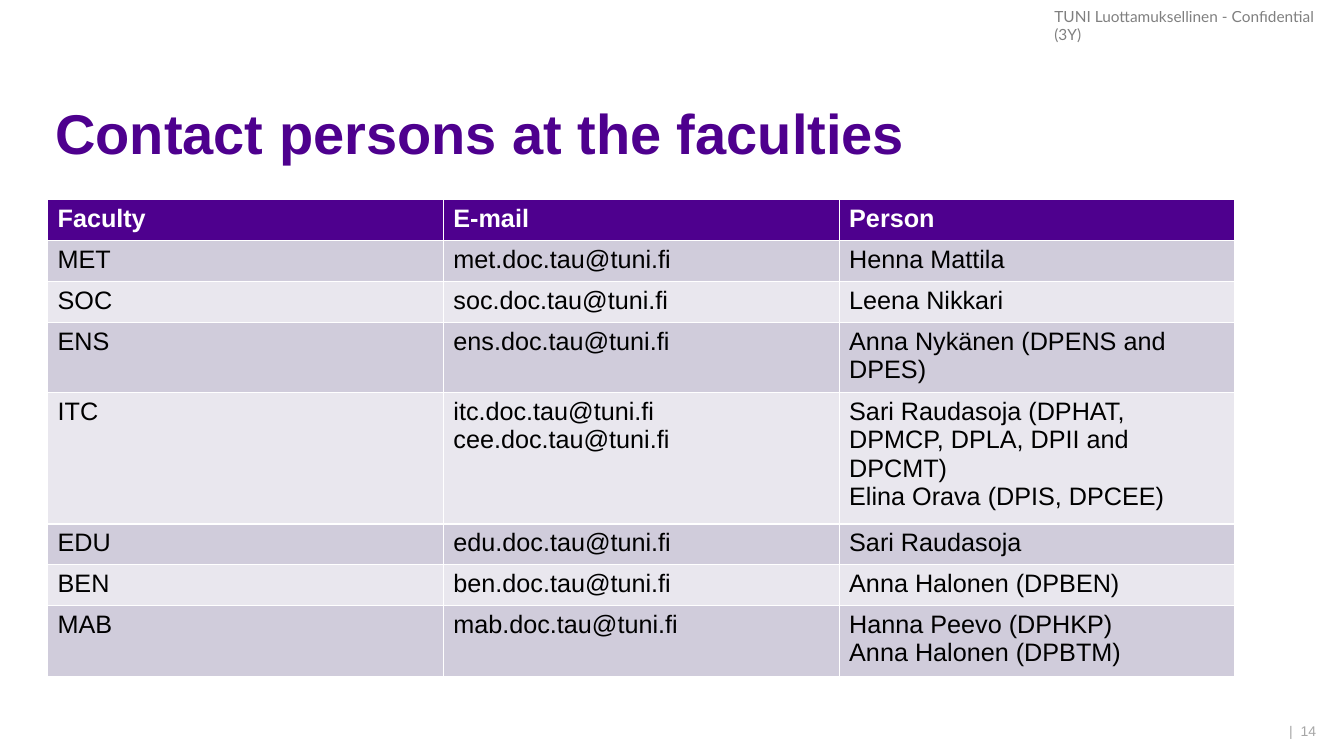
from lxml import etree
from pptx import Presentation
from pptx.dml.color import RGBColor
from pptx.enum import text
from pptx.oxml import ns
from pptx.util import Pt


def color(value):
    return RGBColor.from_string(value)


def add_label(slide, content, left, top, width, height, size, font, fill):
    shape = slide.shapes.add_textbox(Pt(left), Pt(top), Pt(width), Pt(height))
    frame = shape.text_frame
    frame.word_wrap = True
    frame.margin_left = 0
    paragraph = frame.paragraphs[0]
    paragraph.text = content
    paragraph.font.size = Pt(size)
    paragraph.font.name = font
    paragraph.font.color.rgb = color(fill)
    return frame


presentation = Presentation()
presentation.slide_width = Pt(960)
presentation.slide_height = Pt(540)
slide = presentation.slides.add_slide(presentation.slide_layouts[5])

notice = add_label(slide, "TUNI Luottamuksellinen - Confidential (3Y)",
                   753.1, 5, 204.5, 13, 11, "Lato", "000000")
notice.margin_top = notice.margin_right = notice.margin_bottom = 0
notice_color = next(notice.paragraphs[0]._p.iter(ns.qn("a:srgbClr")))
etree.SubElement(notice_color, ns.qn("a:alpha"), val="50000")

title = slide.shapes.title
title.left, title.top, title.width, title.height = Pt(32.4), Pt(72), Pt(828), Pt(51.1)
title.text_frame.vertical_anchor = text.MSO_ANCHOR.MIDDLE
title.text_frame.auto_size = text.MSO_AUTO_SIZE.NONE
paragraph = title.text_frame.paragraphs[0]
paragraph.text = "Contact persons at the faculties"
paragraph.alignment = text.PP_ALIGN.LEFT
paragraph.line_spacing = 0.9
paragraph.font.size = Pt(40)
paragraph.font.name = "Arial"
paragraph.font.bold = True
paragraph.font.color.rgb = color("4E008E")

contacts = [
    ("Faculty", "E-mail", "Person"),
    ("MET", "met.doc.tau@tuni.fi", "Henna Mattila"),
    ("SOC", "soc.doc.tau@tuni.fi", "Leena Nikkari"),
    ("ENS", "ens.doc.tau@tuni.fi", "Anna Nykänen (DPENS and DPES)"),
    ("ITC", "itc.doc.tau@tuni.fi\ncee.doc.tau@tuni.fi",
     "Sari Raudasoja (DPHAT, DPMCP, DPLA, DPII and DPCMT)\nElina Orava (DPIS, DPCEE)"),
    ("EDU", "edu.doc.tau@tuni.fi", "Sari Raudasoja"),
    ("BEN", "ben.doc.tau@tuni.fi", "Anna Halonen (DPBEN)"),
    ("MAB", "mab.doc.tau@tuni.fi", "Hanna Peevo (DPHKP)\vAnna Halonen (DPBTM)"),
]
row_heights = [29.2, 29.2, 29.2, 47.2, 87.8, 29.2, 29.2, 47.2]
table = slide.shapes.add_table(len(contacts), 3, Pt(34), Pt(142.6),
                               Pt(848.1), Pt(sum(row_heights))).table
for column in table.columns:
    column.width = Pt(282.7)
for row_index, contact in enumerate(contacts):
    table.rows[row_index].height = Pt(row_heights[row_index])
    is_header = row_index == 0
    band = "4E008E" if is_header else ("E9E7EE", "D0CCDB")[row_index % 2]
    for column_index, content in enumerate(contact):
        cell = table.cell(row_index, column_index)
        cell.text = content
        cell.fill.solid()
        cell.fill.fore_color.rgb = color(band)
        for paragraph in cell.text_frame.paragraphs:
            paragraph.font.size = Pt(18)
            paragraph.font.name = "Arial"
            paragraph.font.bold = is_header
            paragraph.font.color.rgb = color("FFFFFF" if is_header else "000000")

page_number = add_label(slide, "|  14", 920.9, 511.2, 29.5, 20.2, 10, "Arial", "A6A6A6")
page_number.vertical_anchor = text.MSO_ANCHOR.BOTTOM

presentation.save("out.pptx")
